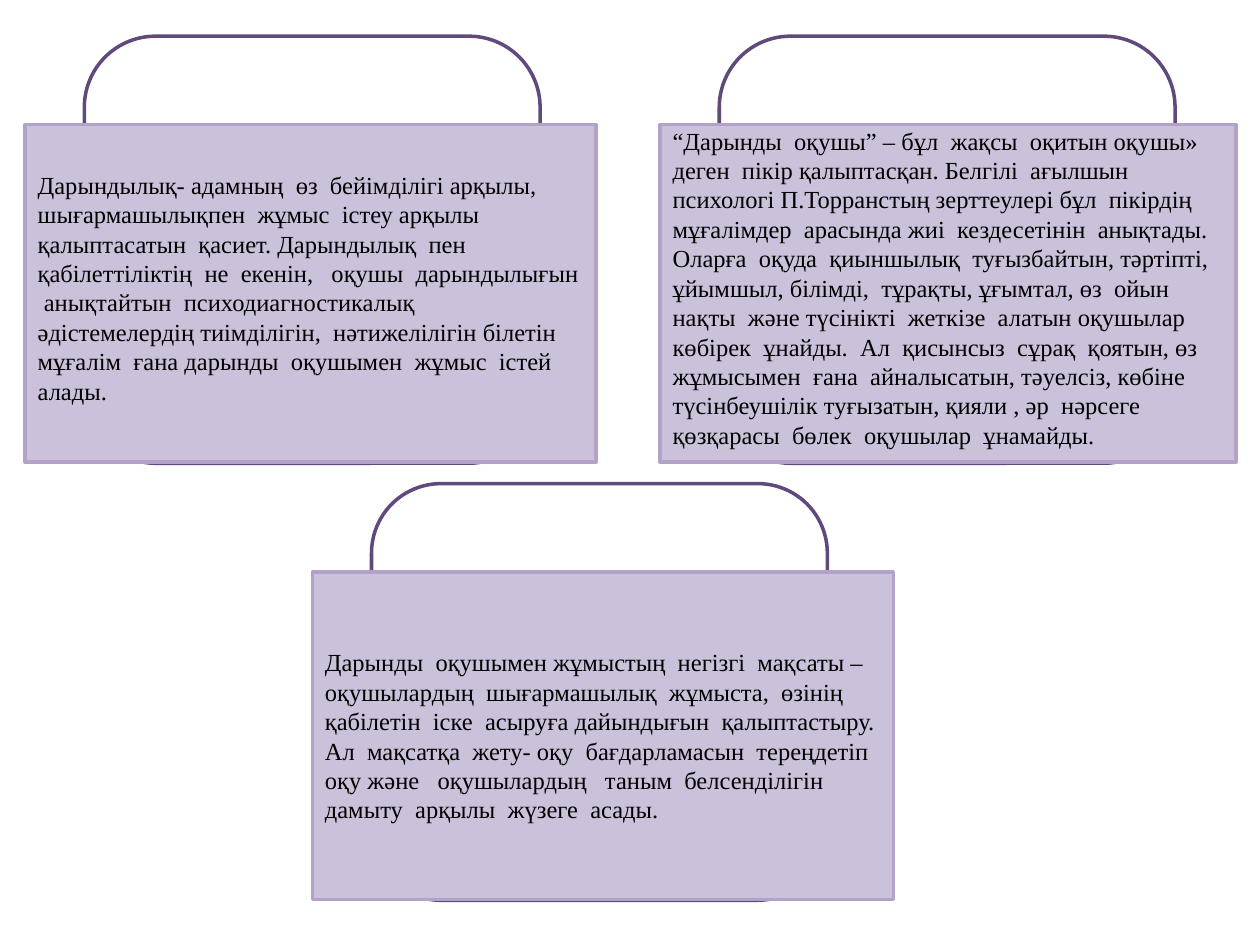
import pptx
import pptx.dml.color
import pptx.enum.shapes
import pptx.enum.text
import pptx.util
from pptx.util import Cm

COLOURS = {"frame": "604A7B", "panel": "CCC1DA", "edge": "B3A2C7", "text": "000000"}
FRAME_INDENT, FRAME_RISE, FRAME_WIDTH = 1.19, 1.78, 9.19
FRAME_DROP = 0.02

GIFTEDNESS = (
    "Дарындылық- адамның  өз  бейімділігі арқылы,  шығармашылықпен  жұмыс  істеу арқылы  "
    "қалыптасатын  қасиет. Дарындылық  пен  қабілеттіліктің  не  екенін,   оқушы  дарындылығын  "
    "анықтайтын  психодиагностикалық  әдістемелердің тиімділігін,  нәтижелілігін білетін  "
    "мұғалім  ғана дарынды  оқушымен  жұмыс  істей  алады."
)
OPINION = (
    "“Дарынды  оқушы” – бұл  жақсы  оқитын оқушы» деген  пікір қалыптасқан. Белгілі  ағылшын  "
    "психологі П.Торранстың зерттеулері бұл  пікірдің  мұғалімдер  арасында жиі  кездесетінін  "
    "анықтады.  Оларға  оқуда  қиыншылық  туғызбайтын, тәртіпті,  ұйымшыл, білімді,  тұрақты, "
    "ұғымтал, өз  ойын  нақты  және түсінікті  жеткізе  алатын оқушылар  көбірек  ұнайды.  "
    "Ал  қисынсыз  сұрақ  қоятын, өз  жұмысымен  ғана  айналысатын, тәуелсіз, көбіне  "
    "түсінбеушілік туғызатын, қияли , әр  нәрсеге  қөзқарасы  бөлек  оқушылар  ұнамайды."
)
PURPOSE = (
    "Дарынды  оқушымен жұмыстың  негізгі  мақсаты – оқушылардың  шығармашылық  жұмыста,  өзінің  "
    "қабілетін  іске  асыруға дайындығын  қалыптастыру. Ал  мақсатқа  жету- оқу  бағдарламасын  "
    "тереңдетіп  оқу және   оқушылардың   таным  белсенділігін дамыту  арқылы  жүзеге  асады."
)


def colour(name):
    return pptx.dml.color.RGBColor.from_string(COLOURS[name])


def add_box(slide, kind, left, top, width, height, line, fill=None):
    box = slide.shapes.add_shape(kind, Cm(left), Cm(top), Cm(width), Cm(height))
    box.shadow.inherit = False
    if fill:
        box.fill.solid()
        box.fill.fore_color.rgb = colour(fill)
    else:
        box.fill.background()
    box.line.color.rgb = colour(line)
    box.line.width = pptx.util.Pt(2)
    return box


def write_text(box, text, size=14, font="Times New Roman", ink="text", bottom=0.0):
    frame = box.text_frame
    frame.word_wrap = True
    frame.vertical_anchor = pptx.enum.text.MSO_ANCHOR.MIDDLE
    frame.margin_top, frame.margin_bottom = Cm(0), Cm(bottom)
    para = frame.paragraphs[0]
    para.alignment = pptx.enum.text.PP_ALIGN.LEFT
    span = para.add_run()
    span.text = text
    span.font.size = pptx.util.Pt(size)
    span.font.name = font
    span.font.color.rgb = colour(ink)


def add_card(slide, left, top, width, height, text, bottom=0.0):
    """Place a text panel over a rounded frame that rises above it."""
    shapes = pptx.enum.shapes.MSO_SHAPE
    add_box(slide, shapes.ROUNDED_RECTANGLE, left + FRAME_INDENT, top - FRAME_RISE,
            FRAME_WIDTH, height + FRAME_RISE + FRAME_DROP, "frame")
    panel = add_box(slide, shapes.RECTANGLE, left, top, width, height, "edge", fill="panel")
    write_text(panel, text, bottom=bottom)


def main():
    deck = pptx.Presentation()
    deck.slide_width, deck.slide_height = Cm(25.4), Cm(19.05)
    slide = deck.slides.add_slide(deck.slide_layouts[6])
    add_card(slide, 0.51, 2.51, 11.51, 6.81, GIFTEDNESS, bottom=0.24)
    add_card(slide, 13.31, 2.51, 11.61, 6.81, OPINION, bottom=0.24)
    add_card(slide, 6.3, 11.53, 11.71, 6.6, PURPOSE)
    deck.save("out.pptx")


if __name__ == "__main__":
    main()
